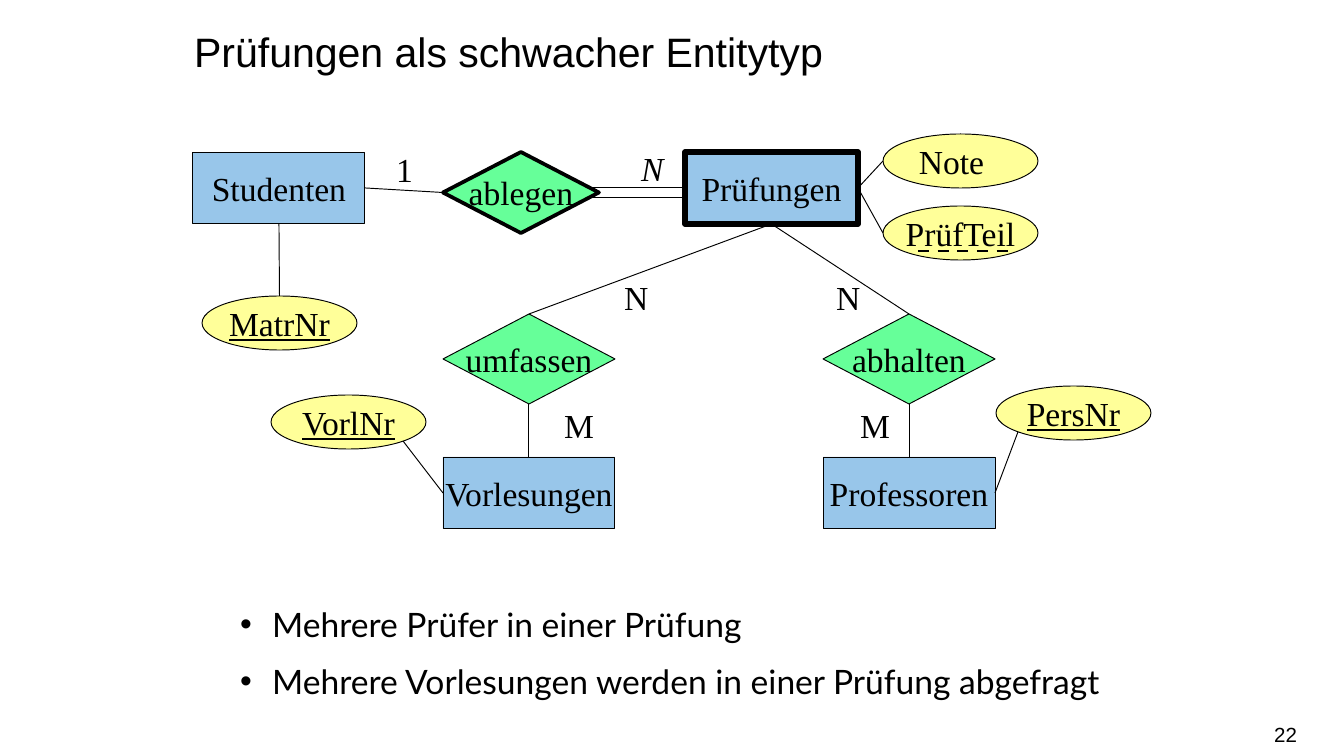
from lxml import etree
from pptx import Presentation
from pptx import util as u
from pptx.dml.color import RGBColor
from pptx.enum import dml, shapes, text
from pptx.oxml.ns import qn

PX = 914400 / 134.4
SERIF = "Times New Roman"
BLACK = "000000"
KINDS = {
    "entity": (shapes.MSO_SHAPE.RECTANGLE, "98C6EA"),
    "relation": (shapes.MSO_SHAPE.DIAMOND, "66FF99"),
    "attribute": (shapes.MSO_SHAPE.OVAL, "FFFF99"),
}
NODES = [
    ("Studenten", "entity", (193, 152, 172, 72), 0.5),
    ("ablegen", "relation", (443, 152, 156, 81), 2),
    ("Prüfungen", "entity", (685, 152, 173, 72), 3),
    ("Note", "attribute", (883, 134, 155, 54), 0.5),
    ("PrüfTeil", "attribute", (883, 206, 155, 54), 0.5),
    ("MatrNr", "attribute", (202, 296, 155, 54), 0.5),
    ("Vorlesungen", "entity", (443, 457, 172, 72), 0.5),
    ("umfassen", "relation", (443, 314, 172, 90), 0.5),
    ("VorlNr", "attribute", (271, 395, 155, 54), 0.5),
    ("abhalten", "relation", (823, 314, 172, 90), 0.5),
    ("Professoren", "entity", (823, 457, 172, 72), 0.5),
    ("PersNr", "attribute", (996, 386, 155, 54), 0.5),
]
KEYS = {"MatrNr", "VorlNr", "PersNr"}
TOP, LEFT, BOTTOM, RIGHT = range(4)
LINKS = [
    (("Studenten", BOTTOM), ("MatrNr", TOP)),
    ((403, 441), ("Vorlesungen", LEFT)),
    (("umfassen", TOP), ("Prüfungen", BOTTOM)),
    (("Prüfungen", BOTTOM), ("abhalten", TOP)),
    (("umfassen", BOTTOM), ("Vorlesungen", TOP)),
    (("abhalten", BOTTOM), ("Professoren", TOP)),
    (("Studenten", RIGHT), ("ablegen", LEFT)),
    ((1018, 432), ("Professoren", RIGHT)),
    (("Prüfungen", RIGHT), (883, 161)),
    (("Prüfungen", RIGHT), (883, 233)),
    ((590, 188), ("Prüfungen", LEFT)),
    ((590, 197), (685, 197)),
]
PARTIAL_KEY_LINE = ((918, 251), (1013, 251))
CARDINALITIES = [
    ("1", (383, 142, 35, 54)),
    ("N", (628, 141, 50, 54)),
    ("N", (611, 270, 51, 54)),
    ("N", (823, 270, 51, 54)),
    ("M", (551, 398, 58, 54)),
    ("M", (847, 398, 58, 54)),
]
ITALIC_CARDINALITY = 1
REMARKS = [
    "Mehrere Prüfer in einer Prüfung",
    "Mehrere Vorlesungen werden in einer Prüfung abgefragt",
]


def px(n):
    return u.Emu(round(n * PX))


def color(hex_value):
    return RGBColor.from_string(hex_value)


def style(paragraph, font, size, italic=None, underline=None):
    for run in paragraph.runs:
        run.font.name = font
        run.font.size = u.Pt(size)
        run.font.color.rgb = color(BLACK)
        run.font.italic = italic
        run.font.underline = underline


def add_label(slide, words, box, font=SERIF, size=18, italic=None, wrap=True):
    label = slide.shapes.add_textbox(*map(px, box))
    label.text_frame.word_wrap = wrap
    label.text_frame.text = words
    for paragraph in label.text_frame.paragraphs:
        style(paragraph, font, size, italic)
    return label.text_frame


def add_node(slide, name, kind, box, width):
    outline, fill = KINDS[kind]
    node = slide.shapes.add_shape(outline, *map(px, box))
    node.shadow.inherit = False
    node.fill.solid()
    node.fill.fore_color.rgb = color(fill)
    node.line.color.rgb = color(BLACK)
    node.line.width = u.Pt(width)
    frame = node.text_frame
    frame.word_wrap = False
    frame.vertical_anchor = text.MSO_ANCHOR.MIDDLE
    frame.text = name
    paragraph = frame.paragraphs[0]
    paragraph.alignment = text.PP_ALIGN.LEFT if name == "Note" else text.PP_ALIGN.CENTER
    style(paragraph, SERIF, 18, underline=name in KEYS or None)
    return node


def add_link(slide, nodes, start, end, width=0.5):
    points = [p if isinstance(p[0], int) else (0, 0) for p in (start, end)]
    link = slide.shapes.add_connector(
        shapes.MSO_CONNECTOR.STRAIGHT, *[px(n) for point in points for n in point])
    for join, place in ((link.begin_connect, start), (link.end_connect, end)):
        if isinstance(place[0], str):
            join(nodes[place[0]], place[1])
    link.line.color.rgb = color(BLACK)
    link.line.width = u.Pt(width)
    etree.SubElement(link._element.spPr, qn("a:effectLst"))
    return link


def main():
    deck = Presentation()
    deck.slide_width, deck.slide_height = px(1344), px(756)
    slide = deck.slides.add_slide(deck.slide_layouts[6])

    title = add_label(slide, "Prüfungen als schwacher Entitytyp", (181, 8, 1008, 126), "Arial", 22)
    title.paragraphs[0].line_spacing = 1.25

    nodes = {node[0]: add_node(slide, *node) for node in NODES}
    for start, end in LINKS:
        add_link(slide, nodes, start, end)
    add_link(slide, nodes, *PARTIAL_KEY_LINE, width=1.5).line.dash_style = dml.MSO_LINE.DASH

    for i, (cardinality, box) in enumerate(CARDINALITIES):
        add_label(slide, cardinality, box, italic=i == ITALIC_CARDINALITY or None, wrap=i == 0)

    remarks = add_label(slide, "\n".join(REMARKS), (227, 597, 962, 116), "Lato")
    for i, paragraph in enumerate(remarks.paragraphs):
        props = paragraph._p.get_or_add_pPr()
        props.set("marL", str(px(32)))
        props.set("indent", str(-px(32)))
        etree.SubElement(props, qn("a:buFont"), typeface="Arial")
        etree.SubElement(props, qn("a:buChar"), char="•")
        if i:
            paragraph.space_before = u.Pt(9)

    number = add_label(slide, "22", (996, 714, 301, 40), "Arial", 11)
    number.margin_left = number.margin_right = 0
    number.vertical_anchor = text.MSO_ANCHOR.MIDDLE
    number.paragraphs[0].alignment = text.PP_ALIGN.RIGHT

    deck.save("out.pptx")


if __name__ == "__main__":
    main()
